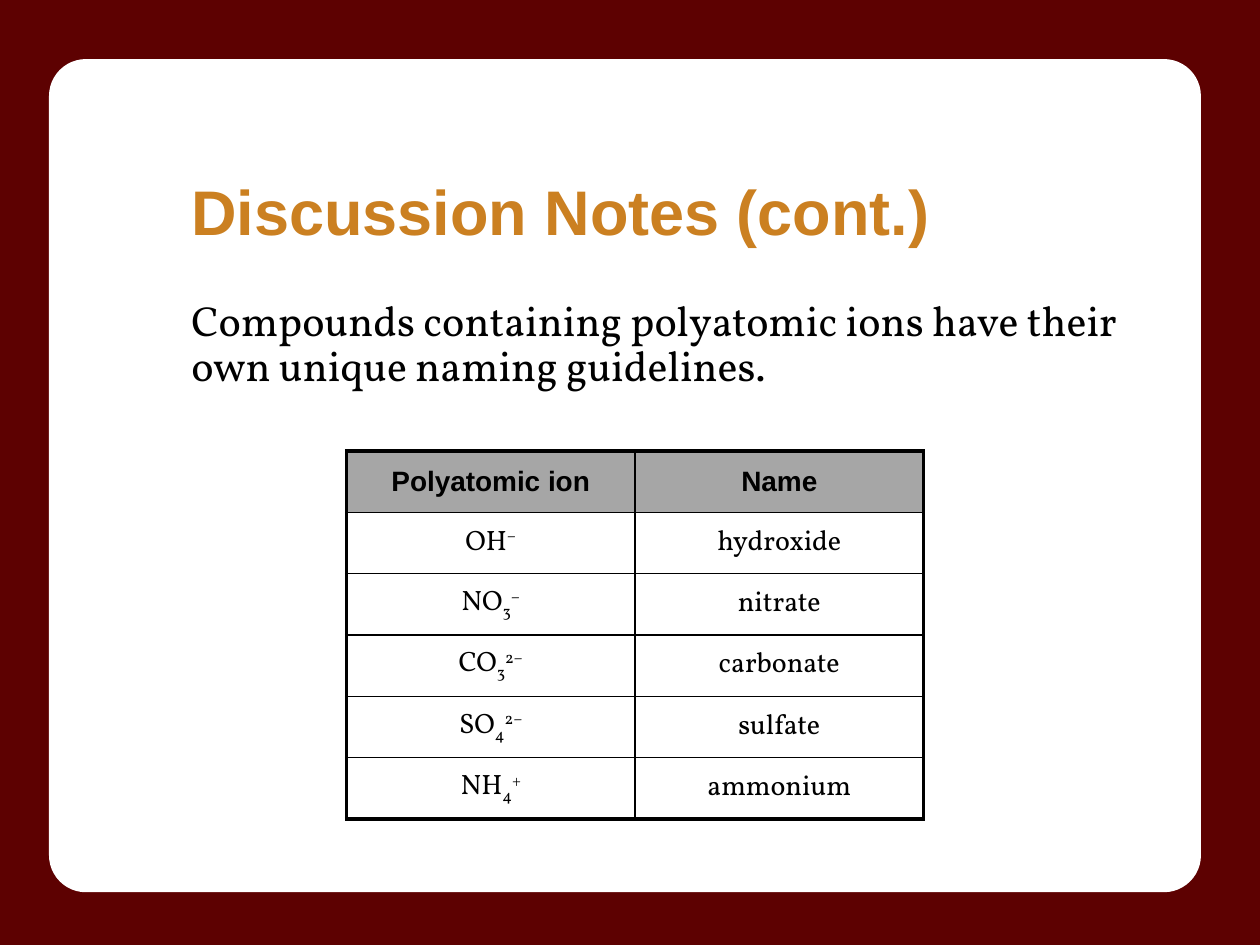
"""Build the discussion notes slide on polyatomic ions."""
from dataclasses import dataclass

from lxml.etree import SubElement
from pptx import Presentation
from pptx.dml.color import RGBColor
from pptx.enum.shapes import MSO_SHAPE
from pptx.enum.text import MSO_ANCHOR, PP_ALIGN
from pptx.oxml.ns import qn
from pptx.util import Inches, Pt

MAROON, WHITE, GOLD, BLACK, GRAY = "5D0101", "FFFFFF", "CB8021", "000000", "A6A6A6"
TITLE = {"name": "Arial", "size": Pt(36), "bold": True}
BODY = {"name": "Vollkorn", "size": Pt(24), "bold": False}
HEADING = {"name": "Arial", "size": Pt(16), "bold": True}
ENTRY = {"name": "Vollkorn", "size": Pt(16), "bold": False}
THIN, THICK = Pt(1), Pt(2.25)
SUBSCRIPT, SUPERSCRIPT = -25, 30


@dataclass
class Ion:
    """A polyatomic ion with its formula parts and name."""
    base: str
    count: str
    charge: str
    name: str


IONS = [
    Ion("OH", "", "–", "hydroxide"),
    Ion("NO", "3", "–", "nitrate"),
    Ion("CO", "3", "2–", "carbonate"),
    Ion("SO", "4", "2–", "sulfate"),
    Ion("NH", "4", "+", "ammonium"),
]


def paint(target, color: str) -> None:
    """Give a fill one solid colour."""
    target.solid()
    target.fore_color.rgb = RGBColor.from_string(color)


def add_span(para, text: str, style: dict, color: str = BLACK, baseline: int = 0) -> None:
    """Append formatted text, raised or lowered by a percentage."""
    span = para.add_run()
    span.text = text
    for key, value in style.items():
        setattr(span.font, key, value)
    paint(span.font.fill, color)
    if baseline:
        span.font._element.set("baseline", str(baseline * 1000))


def add_panel(page, shape: MSO_SHAPE, bounds: tuple, color: str):
    """Draw a plain shape in one colour."""
    panel = page.shapes.add_shape(shape, *map(Inches, bounds))
    panel.shadow.inherit = False
    paint(panel.fill, color)
    panel.line.fill.background()
    return panel


def add_text(page, bounds: tuple, text: str, style: dict, color: str, layout: dict,
             anchor: MSO_ANCHOR = MSO_ANCHOR.TOP) -> None:
    """Place a wrapped text box with one paragraph."""
    frame = page.shapes.add_textbox(*map(Inches, bounds)).text_frame
    frame.word_wrap = True
    frame.vertical_anchor = anchor
    para = frame.paragraphs[0]
    for key, value in layout.items():
        setattr(para, key, value)
    add_span(para, text, style, color)


def set_borders(cell, widths: dict) -> None:
    """Insert black cell borders ahead of the cell fill."""
    properties = cell._tc.get_or_add_tcPr()
    for index, (side, width) in enumerate(widths.items()):
        line = SubElement(properties, qn(f"a:ln{side}"), w=str(int(width)))
        SubElement(SubElement(line, qn("a:solidFill")), qn("a:srgbClr"), val=BLACK)
        properties.insert(index, line)


def fill_cell(cell, spans: list, style: dict, color: str) -> None:
    """Write centred spans into a coloured cell."""
    paint(cell.fill, color)
    cell.vertical_anchor = MSO_ANCHOR.MIDDLE
    para = cell.text_frame.paragraphs[0]
    para.alignment = PP_ALIGN.CENTER
    para.space_before = Pt(3.2)
    for text, baseline in spans:
        if text:
            add_span(para, text, style, baseline=baseline)


def add_ion_table(page, ions: list[Ion]) -> None:
    """Draw the table of ions and names with a heavy outer frame."""
    rows = [[[("Polyatomic ion", 0)], [("Name", 0)]]]
    rows += [[[(ion.base, 0), (ion.count, SUBSCRIPT), (ion.charge, SUPERSCRIPT)],
              [(ion.name, 0)]] for ion in ions]
    bounds = map(Inches, (2.75, 3.58, 4.58, 2.92))
    table = page.shapes.add_table(len(rows), 2, *bounds).table
    table.horz_banding = False
    last_row, last_column = len(rows) - 1, 1
    for row, contents in enumerate(rows):
        style, color = (ENTRY, WHITE) if row else (HEADING, GRAY)
        for column, spans in enumerate(contents):
            cell = table.cell(row, column)
            fill_cell(cell, spans, style, color)
            set_borders(cell, {
                "L": THIN if column else THICK,
                "R": THICK if column == last_column else THIN,
                "T": THIN if row else THICK,
                "B": THICK if row == last_row else THIN,
            })


def main() -> None:
    """Assemble and save the slide."""
    deck = Presentation()
    deck.slide_width, deck.slide_height = Inches(10), Inches(7.5)
    page = deck.slides.add_slide(deck.slide_layouts[6])
    add_panel(page, MSO_SHAPE.RECTANGLE, (0, 0, 10, 7.5), MAROON)
    card = add_panel(page, MSO_SHAPE.ROUNDED_RECTANGLE, (0.42, 0.5, 9.08, 6.55), WHITE)
    card.adjustments[0] = 0.04
    paint(card.line.fill, WHITE)
    card.line.width = Pt(4.5)
    add_text(page, (1.42, 1.17, 8.08, 1), "Discussion Notes (cont.)", TITLE, GOLD,
             {}, MSO_ANCHOR.MIDDLE)
    add_text(page, (1.42, 2.33, 7.83, 1),
             "Compounds containing polyatomic ions have their own unique naming guidelines.",
             BODY, BLACK, {"line_spacing": 0.9, "space_before": Pt(4.8)})
    add_ion_table(page, IONS)
    deck.save("out.pptx")


if __name__ == "__main__":
    main()
